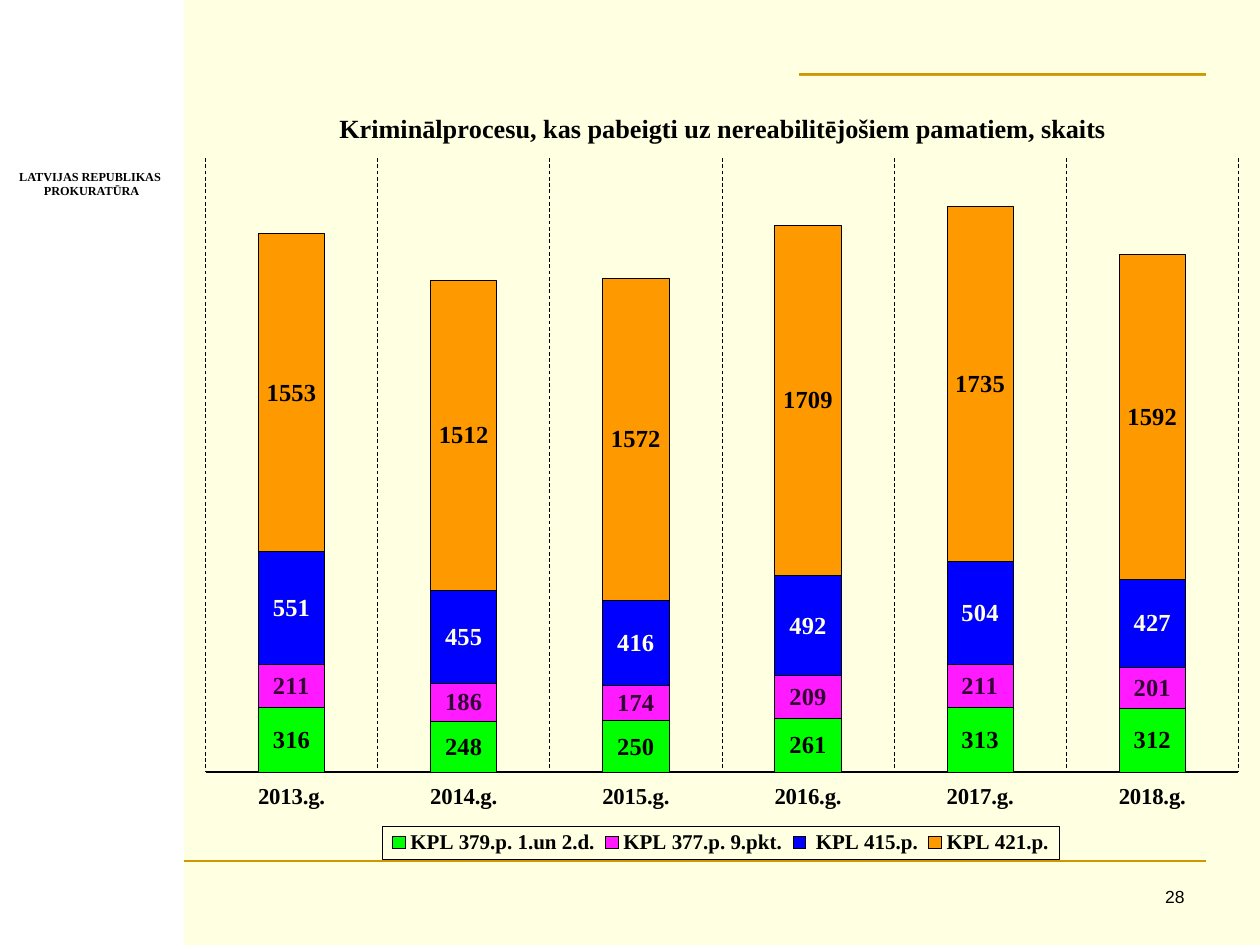
from lxml import etree
from pptx import Presentation
from pptx.chart.data import CategoryChartData
from pptx.dml.color import RGBColor
from pptx.enum.chart import XL_CHART_TYPE, XL_LEGEND_POSITION, XL_TICK_LABEL_POSITION, XL_TICK_MARK
from pptx.enum.dml import MSO_LINE
from pptx.enum.shapes import MSO_CONNECTOR, MSO_SHAPE
from pptx.enum.text import PP_ALIGN
from pptx.oxml import parse_xml
from pptx.oxml.ns import nsdecls, qn
from pptx.util import Emu, Pt

STACKED = XL_CHART_TYPE.COLUMN_STACKED
BOTTOM = XL_LEGEND_POSITION.BOTTOM
LOW = XL_TICK_LABEL_POSITION.LOW
NO_TICK = XL_TICK_MARK.NONE
DASH = MSO_LINE.DASH
STRAIGHT = MSO_CONNECTOR.STRAIGHT
RECTANGLE = MSO_SHAPE.RECTANGLE
CENTER, RIGHT = PP_ALIGN.CENTER, PP_ALIGN.RIGHT

EMU_PER_PX = 914400 / 126
SERIF, SANS = "Times New Roman", "Arial"
COLORS = {
    "cream": "FFFFE1", "white": "FFFFFF", "gold": "CC9900", "black": "000000",
    "green": "00FF00", "pink": "FF1AFF", "blue": "0000FF", "orange": "FF9900",
    "plum": "330033",
}
YEARS = [f"{year}.g." for year in range(2013, 2019)]
SERIES = [
    ("KPL 379.p. 1.un 2.d.", (316, 248, 250, 261, 313, 312), "green", "black"),
    ("KPL 377.p. 9.pkt.", (211, 186, 174, 209, 211, 201), "pink", "plum"),
    (" KPL 415.p.", (551, 455, 416, 492, 504, 427), "blue", "cream"),
    ("KPL 421.p.", (1553, 1512, 1572, 1709, 1735, 1592), "orange", "black"),
]


def px(value):
    return Emu(round(value * EMU_PER_PX))


def color(name):
    return RGBColor.from_string(COLORS[name])


class SlideBuilder:
    def __init__(self, slide):
        self.slide = slide
        self.shapes = slide.shapes

    def background(self, fill):
        self.slide.background.fill.solid()
        self.slide.background.fill.fore_color.rgb = color(fill)

    def style_font(self, font, size, name=SERIF, ink="black", bold=True):
        font.size, font.name, font.bold = Pt(size), name, bold
        font.color.rgb = color(ink)

    def style_line(self, line, width, ink="black"):
        line.width = Pt(width)
        line.color.rgb = color(ink)

    def panel(self, left, top, width, height, fill):
        shape = self.shapes.add_shape(RECTANGLE, px(left), px(top), px(width), px(height))
        shape.shadow.inherit = False
        shape.fill.solid()
        shape.fill.fore_color.rgb = color(fill)
        shape.line.fill.background()

    def rule(self, left, right, y):
        connector = self.shapes.add_connector(STRAIGHT, px(left), px(y), px(right), px(y))
        self.style_line(connector.line, 2.25, "gold")
        etree.SubElement(connector._element.spPr, qn("a:effectLst"))

    def text(self, left, top, width, height, lines, align, wrap=True, margin=None, **style):
        shape = self.shapes.add_textbox(px(left), px(top), px(width), px(height))
        frame = shape.text_frame
        frame.word_wrap = wrap
        if margin is not None:
            frame.margin_left = frame.margin_right = px(margin)
            frame.margin_top = frame.margin_bottom = px(margin)
        for index, line in enumerate(lines):
            paragraph = frame.add_paragraph() if index else frame.paragraphs[0]
            paragraph.alignment = align
            run = paragraph.add_run()
            run.text = line
            self.style_font(run.font, **style)

    def layout(self, element, index, x, y, width=None, height=None, inner=False):
        for old in element.findall(qn("c:layout")):
            element.remove(old)
        values = [("xMode", "edge"), ("yMode", "edge"), ("x", x), ("y", y)]
        if inner:
            values.insert(0, ("layoutTarget", "inner"))
        if width is not None:
            values += [("w", width), ("h", height)]
        body = "".join(f'<c:{tag} val="{value}"/>' for tag, value in values)
        element.insert(index, parse_xml(
            f'<c:layout {nsdecls("c")}><c:manualLayout>{body}</c:manualLayout></c:layout>'))

    def area(self, before, line):
        before.addnext(parse_xml(
            f'<c:spPr {nsdecls("c", "a")}><a:solidFill><a:srgbClr val="{COLORS["cream"]}"/>'
            f'</a:solidFill>{line}</c:spPr>'))

    def stacked_chart(self, left, top, width, height, title):
        data = CategoryChartData()
        data.categories = YEARS
        for name, values, _, _ in SERIES:
            data.add_series(name, values)
        chart = self.shapes.add_chart(
            STACKED, px(left), px(top), px(width), px(height), data).chart
        self.style_font(chart.font, 10, bold=False)
        self.area(chart._chartSpace.find(qn("c:chart")), "<a:ln><a:noFill/></a:ln>")

        chart.has_title = True
        run = chart.chart_title.text_frame.paragraphs[0].add_run()
        run.text = title
        self.style_font(run.font, 15)
        self.layout(chart.chart_title._element, 1, 0.14, 0.04)

        plot = chart.plots[0]
        plot.gap_width, plot.overlap, plot.vary_by_categories = 160, 100, False
        for series, (_, _, fill, ink) in zip(plot.series, SERIES):
            series.format.fill.solid()
            series.format.fill.fore_color.rgb = color(fill)
            self.style_line(series.format.line, 0.5)
            series.data_labels.show_value = True
            self.style_font(series.data_labels.font, 14, ink=ink)
        self.layout(chart._chartSpace.chart.plotArea, 0, 0.02, 0.105, 0.96, 0.783, inner=True)

        years = chart.category_axis
        years.major_tick_mark = years.minor_tick_mark = NO_TICK
        years.tick_label_position = LOW
        self.style_font(years.tick_labels.font, 13)
        self.style_line(years.format.line, 1.5)
        years.has_major_gridlines = True
        self.style_line(years.major_gridlines.format.line, 0.5)
        years.major_gridlines.format.line.dash_style = DASH
        counts = chart.value_axis
        counts.has_major_gridlines = counts.visible = False
        counts.minimum_scale, counts.maximum_scale = 0, 3000

        chart.has_legend = True
        legend = chart.legend
        legend.position, legend.include_in_layout = BOTTOM, False
        self.style_font(legend.font, 12)
        self.layout(legend._element, 1, 0.184, 0.957, 0.63, 0.042)
        self.area(legend._element.find(qn("c:overlay")),
                  f'<a:ln w="6350"><a:solidFill><a:srgbClr val="{COLORS["black"]}"/>'
                  '</a:solidFill></a:ln>')


def main():
    presentation = Presentation()
    presentation.slide_width, presentation.slide_height = px(1260), px(945)
    builder = SlideBuilder(presentation.slides.add_slide(presentation.slide_layouts[6]))
    builder.background("cream")
    builder.panel(0, 0, 184, 945, "white")
    builder.rule(184, 1206, 860)
    builder.rule(799, 1206, 75)
    builder.text(6, 163, 168, 42, ["LATVIJAS REPUBLIKAS", " PROKURATŪRA"], CENTER,
                 wrap=False, margin=6, size=7)
    builder.text(935, 880, 262, 44, ["28"], RIGHT, size=10, name=SANS, bold=False)
    builder.stacked_chart(184, 76, 1076, 784,
                          "Kriminālprocesu, kas pabeigti uz nereabilitējošiem pamatiem, skaits")
    presentation.save("out.pptx")


if __name__ == "__main__":
    main()
